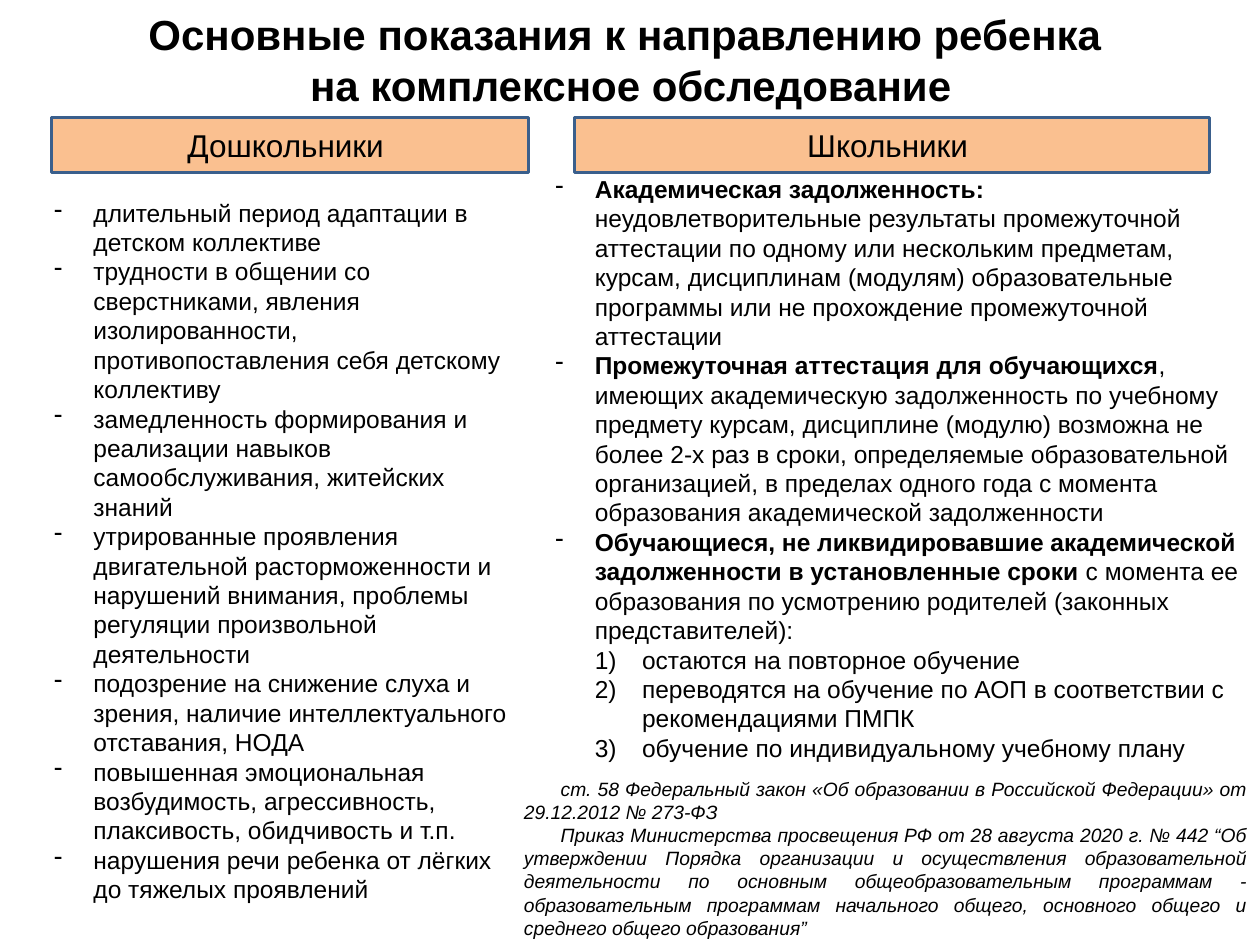
from dataclasses import dataclass

from lxml.etree import SubElement
from pptx import Presentation
from pptx.dml.color import RGBColor
from pptx.enum.shapes import MSO_SHAPE
from pptx.enum.text import MSO_ANCHOR, MSO_AUTO_SIZE, PP_ALIGN
from pptx.oxml.ns import qn
from pptx.util import Pt


@dataclass(frozen=True)
class Theme:
    font: str = "Arial"
    text: RGBColor = RGBColor(0, 0, 0)
    fill: RGBColor = RGBColor(0xFA, 0xC0, 0x90)
    line: RGBColor = RGBColor(0x3A, 0x5F, 0x8C)
    title: int = 24
    header: int = 18
    body: int = 14
    note: int = 11


THEME = Theme()

TITLE = ["Основные показания к направлению ребенка ", "на комплексное обследование"]
PRESCHOOL = [
    "длительный период адаптации в детском коллективе",
    "трудности в общении со сверстниками, явления изолированности, "
    "противопоставления себя детскому коллективу",
    "замедленность формирования и реализации навыков самообслуживания, житейских знаний",
    "утрированные проявления двигательной расторможенности и нарушений внимания, "
    "проблемы регуляции произвольной деятельности",
    "подозрение на снижение слуха и зрения, наличие интеллектуального отставания, НОДА",
    "повышенная эмоциональная возбудимость, агрессивность, плаксивость, обидчивость и т.п.",
    "нарушения речи ребенка от лёгких до тяжелых проявлений",
]
# Each pair is a bold lead and the plain text after it
SCHOOL = [
    ("Академическая задолженность: ",
     "неудовлетворительные результаты промежуточной аттестации по одному или нескольким "
     "предметам, курсам, дисциплинам (модулям) образовательные программы или не "
     "прохождение промежуточной аттестации"),
    ("Промежуточная аттестация для обучающихся",
     ", имеющих академическую задолженность по учебному предмету курсам, дисциплине "
     "(модулю) возможна не более 2-х раз в сроки, определяемые образовательной "
     "организацией, в пределах одного года с момента образования академической "
     "задолженности"),
    ("Обучающиеся, не ликвидировавшие академической задолженности в установленные сроки ",
     "с момента ее образования по усмотрению родителей (законных представителей):"),
]
OPTIONS = [
    "остаются на повторное обучение",
    "переводятся на обучение по АОП в соответствии с рекомендациями ПМПК",
    "обучение по индивидуальному учебному плану",
]
SOURCES = [
    "ст. 58 Федеральный закон «Об образовании в Российской Федерации» "
    "от 29.12.2012 № 273-ФЗ",
    "Приказ Министерства просвещения РФ от 28 августа 2020 г. № 442 “Об утверждении "
    "Порядка организации и осуществления образовательной деятельности по основным "
    "общеобразовательным программам - образовательным программам начального общего, "
    "основного общего и среднего общего образования”",
]


def style(r, size, bold=False, italic=False):
    f = r.font
    f.name, f.size, f.bold, f.italic = THEME.font, Pt(size), bold, italic
    f.color.rgb = THEME.text


def indent(p, left, first, tag=None, **bullet):
    """Set the left margin and first-line indent, with an optional bullet."""
    pPr = p._p.get_or_add_pPr()
    pPr.set("marL", str(Pt(left)))
    pPr.set("indent", str(Pt(first)))
    if tag:
        if tag == "a:buChar":
            SubElement(pPr, qn("a:buFontTx"))
        SubElement(pPr, qn(tag), **bullet)


def add_text(s, box, items, size, align=PP_ALIGN.LEFT, **look):
    """Add a text box; an item is plain text or a (bold lead, text) pair."""
    tf = s.shapes.add_textbox(*map(Pt, box)).text_frame
    tf.word_wrap = True
    tf.auto_size = MSO_AUTO_SIZE.SHAPE_TO_FIT_TEXT
    for i, item in enumerate(items):
        p = tf.add_paragraph() if i else tf.paragraphs[0]
        p.alignment = align
        if isinstance(item, tuple):
            for text, bold in zip(item, (True, False)):
                r = p.add_run()
                r.text = text
                style(r, size, bold)
        else:
            p.text = item
            style(p.runs[0], size, **look)
    return tf.paragraphs


def add_title(s, box):
    add_text(s, box, TITLE, THEME.title, PP_ALIGN.CENTER, bold=True)


def add_header(s, box, text):
    sp = s.shapes.add_shape(MSO_SHAPE.RECTANGLE, *map(Pt, box))
    sp.shadow.inherit = False
    sp.fill.solid()
    sp.fill.fore_color.rgb = THEME.fill
    sp.line.color.rgb = THEME.line
    sp.line.width = Pt(2)
    tf = sp.text_frame
    tf.vertical_anchor = MSO_ANCHOR.MIDDLE
    p = tf.paragraphs[0]
    p.text = text
    p.alignment = PP_ALIGN.CENTER
    style(p.runs[0], THEME.header)


def add_preschool(s, box):
    for p in add_text(s, box, PRESCHOOL, THEME.body):
        indent(p, 22.5, -22.5, "a:buChar", char="-")


def add_school(s, box):
    for i, p in enumerate(add_text(s, box, SCHOOL + OPTIONS, THEME.body)):
        if i < len(SCHOOL):
            indent(p, 22.5, -22.5, "a:buChar", char="-")
        else:
            indent(p, 49.5, -27, "a:buAutoNum", type="arabicParenR")


def add_sources(s, box):
    for p in add_text(s, box, SOURCES, THEME.note, PP_ALIGN.JUSTIFY, italic=True):
        indent(p, 0, 21)


def main():
    prs = Presentation()
    prs.slide_width, prs.slide_height = Pt(720), Pt(540)
    s = prs.slides.add_slide(prs.slide_layouts[6])

    # Title
    add_title(s, (14.4, 1.4, 692, 65.5))

    # Column headers
    add_header(s, (29.5, 67.2, 272.5, 31.5), "Дошкольники ")
    add_header(s, (328.3, 67.2, 363, 31.5), "Школьники ")

    # Columns and legal sources
    add_preschool(s, (23.8, 109.4, 278, 414.7))
    add_school(s, (310.3, 95.8, 409.7, 346.3))
    add_sources(s, (292.3, 440.6, 427.7, 100.8))

    prs.save("out.pptx")


if __name__ == "__main__":
    main()
